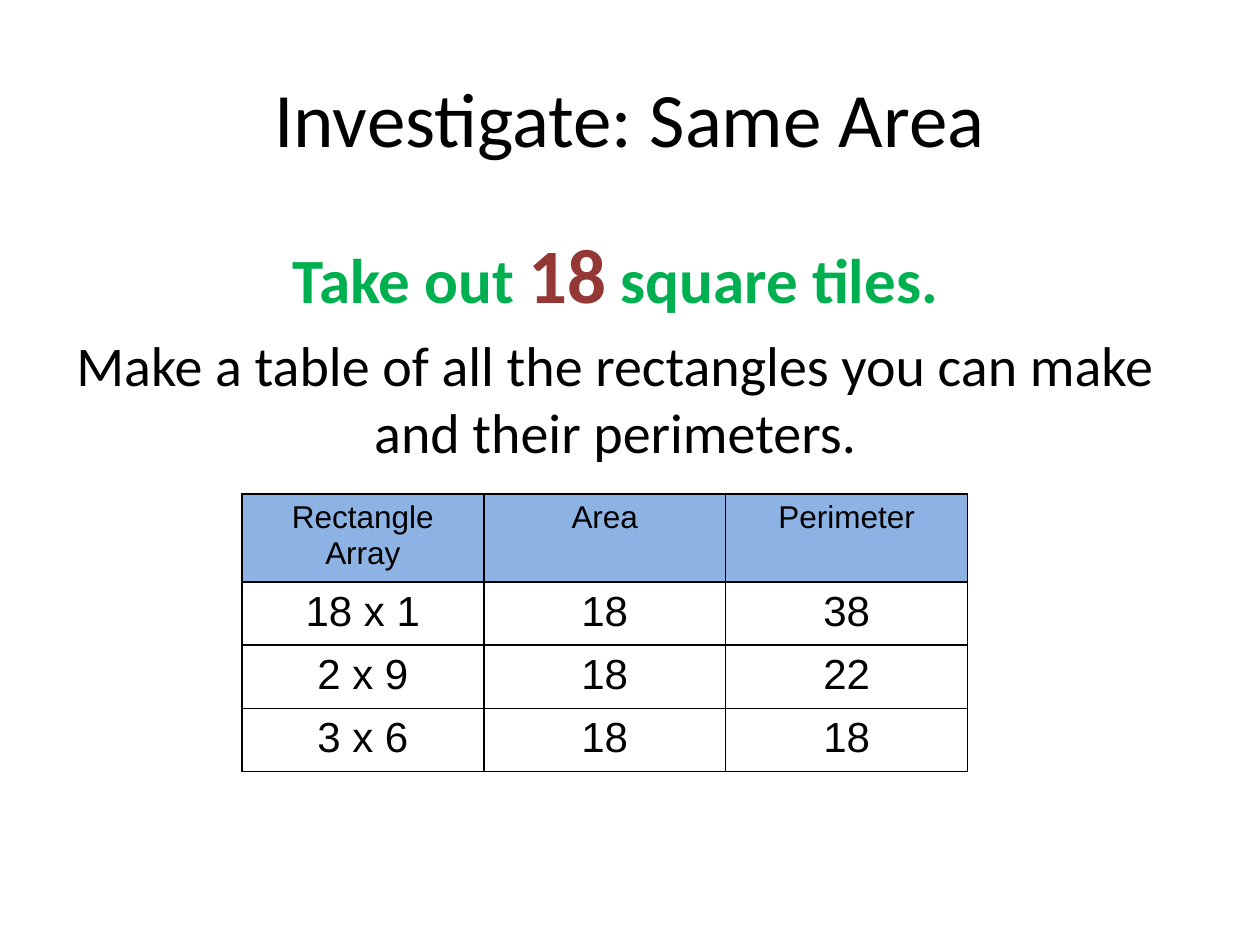
from lxml.etree import SubElement
from pptx import Presentation
from pptx.dml.color import RGBColor
from pptx.enum.text import MSO_ANCHOR, PP_ALIGN
from pptx.oxml.ns import qn
from pptx.util import Inches, Pt

COLORS = {
    "text": "000000",
    "border": "000000",
    "instruction": "00B050",
    "number": "953734",
    "header": "8CB3E3",
}
TABLE_ROWS = [
    ("Rectangle Array", "Area", "Perimeter"),
    ("18 x 1", "18", "38"),
    ("2 x 9", "18", "22"),
    ("3 x 6", "18", "18"),
]
COLUMN_WIDTH = 1.92
HEADER_HEIGHT, ROW_HEIGHT = 0.45, 0.41


def add_run(paragraph, text, size, color="text", font="Calibri", bold=False):
    run = paragraph.add_run()
    run.text = text
    run.font.name = font
    run.font.size = Pt(size)
    run.font.bold = bold
    run.font.color.rgb = RGBColor.from_string(COLORS[color])


def add_text_box(slide, left, top, width, height, anchor=MSO_ANCHOR.TOP):
    box = slide.shapes.add_textbox(*map(Inches, (left, top, width, height)))
    frame = box.text_frame
    frame.word_wrap = True
    frame.vertical_anchor = anchor
    frame.paragraphs[0].alignment = PP_ALIGN.CENTER
    return frame


def set_borders(cell, width=1):
    properties = cell._tc.get_or_add_tcPr()
    for index, side in enumerate(("lnL", "lnR", "lnT", "lnB")):
        line = properties.makeelement(qn(f"a:{side}"), {"w": str(Pt(width))})
        fill = SubElement(line, qn("a:solidFill"))
        SubElement(fill, qn("a:srgbClr"), val=COLORS["border"])
        # Border lines come before the cell fill
        properties.insert(index, line)


def fill_cell(cell, text, is_header):
    if is_header:
        cell.fill.solid()
        cell.fill.fore_color.rgb = RGBColor.from_string(COLORS["header"])
    else:
        cell.fill.background()
    set_borders(cell)
    paragraph = cell.text_frame.paragraphs[0]
    paragraph.alignment = PP_ALIGN.CENTER
    add_run(paragraph, text, 18 if is_header else 24, font="Arial")


def add_rectangle_table(slide, left, top):
    row_count, column_count = len(TABLE_ROWS), len(TABLE_ROWS[0])
    height = HEADER_HEIGHT + ROW_HEIGHT * (row_count - 1)
    table = slide.shapes.add_table(
        row_count, column_count, Inches(left), Inches(top),
        Inches(COLUMN_WIDTH * column_count), Inches(height)).table
    table.first_row = table.horz_banding = False
    for column in table.columns:
        column.width = Inches(COLUMN_WIDTH)
    for row_index, values in enumerate(TABLE_ROWS):
        is_header = row_index == 0
        table.rows[row_index].height = Inches(
            HEADER_HEIGHT if is_header else ROW_HEIGHT)
        for column_index, text in enumerate(values):
            fill_cell(table.cell(row_index, column_index), text, is_header)


def main():
    presentation = Presentation()
    presentation.slide_width = Inches(10)
    presentation.slide_height = Inches(7.5)
    slide = presentation.slides.add_slide(presentation.slide_layouts[6])

    # Title
    title = add_text_box(slide, 0.5, 0.3, 9, 1.25, MSO_ANCHOR.MIDDLE)
    add_run(title.paragraphs[0], "Investigate: Same Area", 44)

    # Instructions, the first line set slightly left of centre
    body = add_text_box(slide, 0.5, 1.75, 9, 4.95)
    tiles = body.paragraphs[0]
    tiles._p.get_or_add_pPr().set("marR", str(Inches(0.23)))
    add_run(tiles, "Take out ", 36, "instruction", bold=True)
    add_run(tiles, "18", 44, "number", bold=True)
    add_run(tiles, " square tiles.", 36, "instruction", bold=True)
    task = body.add_paragraph()
    task.alignment = PP_ALIGN.CENTER
    task.space_before = Pt(6.4)
    add_run(task, "Make a table of all the rectangles you can make "
                  "and their perimeters.", 32)

    # Table of rectangles
    add_rectangle_table(slide, 1.92, 3.92)

    presentation.save("out.pptx")


if __name__ == "__main__":
    main()
